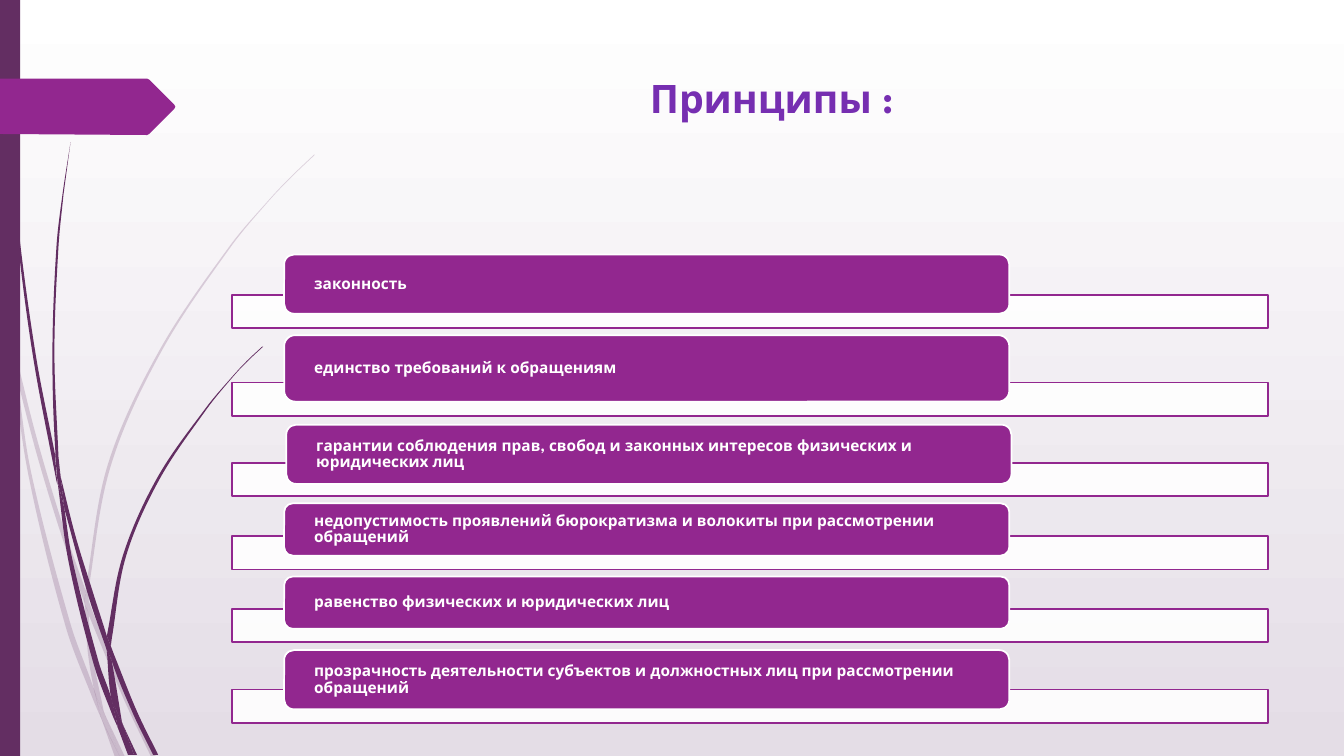
import math

from lxml import etree
from pptx import Presentation
from pptx.dml.color import RGBColor
from pptx.enum.shapes import MSO_SHAPE
from pptx.enum.text import MSO_ANCHOR, PP_ALIGN
from pptx.oxml.ns import qn
from pptx.util import Pt

RECT, ROUND = MSO_SHAPE.RECTANGLE, MSO_SHAPE.ROUNDED_RECTANGLE
LEFT, CENTER = PP_ALIGN.LEFT, PP_ALIGN.CENTER
TOP, MIDDLE = MSO_ANCHOR.TOP, MSO_ANCHOR.MIDDLE

COLORS = {"white": "FFFFFF", "mist": "E4DDE6", "plum": "632E62",
          "magenta": "92278F", "violet": "762EB1"}
FONT = "League Spartan"
GRID = 0.72  # points per unit of the outlines below

# Each outline is a list of sides; a side is a smooth curve through its points
PALE_STEMS = [
    [[(11, 350), (9, 322), (0, 282)], [(0, 299), (10, 344)]],
    [[(17, 376), (36, 449), (58, 522), (84, 599)],
     [(85, 586), (62, 520), (36, 433), (14, 345)]],
    [[(88, 610), (123, 694), (150, 751)], [(155, 751), (127, 692), (92, 607), (88, 596)]],
    [[(105, 711), (119, 751)], [(124, 751)]],
    [[(11, 350), (28, 470), (65, 621), (92, 693), (101, 714)],
     [(99, 707), (93, 683), (70, 619), (31, 469), (17, 376)]],
    [[(84, 599), (87, 646), (93, 683), (96, 692), (105, 711)],
     [(103, 706), (91, 646), (88, 610), (88, 608)]],
    [[(312, 153), (289, 175), (268, 197), (228, 244), (158, 348), (107, 461),
      (85, 584), (85, 586)],
     [(88, 596), (88, 584), (110, 462), (160, 349), (229, 245), (268, 198),
      (290, 175), (312, 154)]],
    [[(101, 714), (114, 751)], [(119, 751)]],
    [[(85, 586), (84, 599), (88, 608)], [(88, 610), (88, 596)]],
    [[(93, 683), (99, 707), (101, 714), (119, 751)], [(105, 711), (96, 692)]],
]
DARK_STEMS = [
    [[(3, 0), (4, 48), (7, 110), (17, 233), (33, 355), (56, 477), (57, 481)],
     [(55, 457), (55, 453), (36, 355), (19, 232), (8, 109), (5, 48), (4, 0)]],
    [[(64, 505), (88, 592), (106, 645)],
     [(106, 633), (106, 631), (93, 590), (75, 532), (60, 472)]],
    [[(110, 641), (111, 656), (132, 708), (152, 749)],
     [(157, 749), (136, 706), (113, 649)]],
    [[(57, 477), (68, 557), (93, 659), (111, 708), (117, 722)],
     [(116, 717), (110, 691), (98, 657), (72, 556), (64, 505)]],
    [[(70, 141), (62, 193), (56, 245), (52, 349), (55, 449), (60, 472)],
     [(58, 453), (54, 349), (58, 245), (63, 193)]],
    [[(122, 719), (133, 749)], [(136, 749)]],
    [[(55, 449), (55, 453), (57, 477)], [(64, 505), (60, 472)]],
    [[(260, 344), (245, 358), (231, 373), (204, 405), (156, 474), (122, 551),
      (106, 631)],
     [(110, 641), (111, 633), (125, 552), (158, 476), (205, 406), (231, 374),
      (245, 359), (261, 344)]],
    [[(117, 722), (127, 749)], [(131, 749)]],
    [[(106, 645), (110, 691), (116, 706), (122, 719)],
     [(121, 716), (111, 656), (109, 651)]],
    [[(106, 631), (106, 645), (109, 651)], [(111, 656), (110, 641)]],
    [[(110, 691), (116, 717), (117, 722), (130, 749)],
     [(133, 749), (122, 719), (116, 706)]],
]
TAG = [[(0, 78)], [(146, 78), (148, 79)], [(173, 104), (174, 106), (173, 108)],
       [(148, 133), (146, 134)], [(0, 133)]]

# Text, top of the bar, then left, top and height of the label
PRINCIPLES = [
    ("законность", 210.5, 203, 181.8, 42.3),
    ("единство требований к обращениям", 273.2, 203, 239.4, 47.5),
    ("гарантии соблюдения прав, свобод и законных интересов физических "
     "и юридических лиц", 330.5, 204.5, 303.4, 42.3),
    ("недопустимость проявлений бюрократизма и волокиты при рассмотрении "
     "обращений", 383, 203, 359.5, 37.4),
    ("равенство физических и юридических лиц", 435, 203, 411.8, 37.4),
    ("прозрачность деятельности субъектов и должностных лиц при рассмотрении "
     "обращений", 492.5, 203, 464.4, 42.3),
]


def rgb(name):
    return RGBColor.from_string(COLORS[name])


def write(sp, text, size=11, color="white", align=LEFT, anchor=MIDDLE,
          spacing=1.0, inset=(7.2, 3.6)):
    tf = sp.text_frame
    tf.word_wrap = True
    tf.vertical_anchor = anchor
    tf.margin_left = tf.margin_right = Pt(inset[0])
    tf.margin_top = tf.margin_bottom = Pt(inset[1])
    p = tf.paragraphs[0]
    p.alignment = align
    p.line_spacing = spacing
    r = p.add_run()
    r.text = text
    r.font.name, r.font.size, r.font.bold = FONT, Pt(size), True
    r.font.color.rgb = rgb(color)


def handles(side, i):
    """Bezier handles, as offsets from its two ends, of segment i of a side."""
    length = math.dist(side[i], side[i + 1])
    offsets = []
    for j, sign in ((i, 1), (i + 1, -1)):
        a, b = side[max(j - 1, 0)], side[min(j + 1, len(side) - 1)]
        k = sign * length / 3 / math.dist(a, b)
        offsets.append(((b[0] - a[0]) * k, (b[1] - a[1]) * k))
    return offsets


def bend(line, start, end, offsets):
    """Turn a straight path segment into a cubic curve."""
    curve = etree.Element(qn("a:cubicBezTo"))
    for (x, y), (dx, dy) in zip((start, end, end), (*offsets, (0, 0))):
        etree.SubElement(curve, qn("a:pt"), x=str(round(x + Pt(dx * GRID))),
                         y=str(round(y + Pt(dy * GRID))))
    line.getparent().replace(line, curve)


class Deck:
    def __init__(self, width, height):
        self.prs = Presentation()
        self.prs.slide_width, self.prs.slide_height = Pt(width), Pt(height)
        self.s = self.prs.slides.add_slide(self.prs.slide_layouts[5])

    def background(self, top, bottom):
        fill = self.s.background.fill
        fill.gradient()
        fill.gradient_angle = 270
        for stop, name, position in zip(fill.gradient_stops, (top, bottom), (0, 1)):
            stop.color.rgb = rgb(name)
            stop.position = position

    def paint(self, sp, fill, line=None, opacity=100):
        sp.shadow.inherit = False
        sp.fill.solid()
        sp.fill.fore_color.rgb = rgb(fill)
        if opacity < 100:
            clr = sp.fill._xPr.find(qn("a:solidFill"))[0]
            etree.SubElement(clr, qn("a:alpha"), val=str(opacity * 1000))
        if line:
            sp.line.color.rgb = rgb(line)
            sp.line.width = Pt(1.25)
        else:
            sp.line.fill.background()

    def shape(self, kind, x, y, w, h, fill, **style):
        sp = self.s.shapes.add_shape(kind, Pt(x), Pt(y), Pt(w), Pt(h))
        self.paint(sp, fill, **style)

    def outline(self, sides, fill, **style):
        corners = [(Pt(x * GRID), Pt(y * GRID)) for side in sides for x, y in side]
        builder = self.s.shapes.build_freeform(*corners[0])
        builder.add_line_segments(corners[1:], close=True)
        sp = builder.convert_to_shape()
        path = sp._element.find(".//" + qn("a:path"))
        steps = list(path)
        points = [(int(pt.get("x")), int(pt.get("y"))) for pt in path.iter(qn("a:pt"))]
        first = 0
        for side in sides:
            for i in range(len(side) - 1):
                n = first + i
                bend(steps[n + 1], points[n], points[n + 1], handles(side, i))
            first += len(side)
        self.paint(sp, fill, **style)

    def title(self, text, x, y, w, h):
        sp = self.s.shapes.title
        sp.left, sp.top, sp.width, sp.height = Pt(x), Pt(y), Pt(w), Pt(h)
        write(sp, text, size=28, color="violet", align=CENTER, anchor=TOP)

    def principle(self, text, bar_top, x, y, h):
        self.shape(RECT, 165.6, bar_top, 740, 23.8, "white", line="magenta", opacity=90)
        self.shape(ROUND, x, y, 518, h, "magenta", line="white")
        box = self.s.shapes.add_textbox(Pt(x + 2), Pt(y + 2), Pt(514), Pt(h - 4))
        write(box, text, spacing=0.9, inset=(19.4, 0))


def main():
    deck = Deck(960, 540)
    deck.background("white", "mist")
    for sides in PALE_STEMS:
        deck.outline(sides, "plum", opacity=20)
    for sides in DARK_STEMS:
        deck.outline(sides, "plum")
    deck.shape(RECT, 0, 0, 14.4, 540, "plum")
    deck.outline(TAG, "magenta")
    deck.title("Принципы : ", 203.8, 49.7, 702, 100.8)
    for row in PRINCIPLES:
        deck.principle(*row)
    deck.prs.save("out.pptx")


if __name__ == "__main__":
    main()
